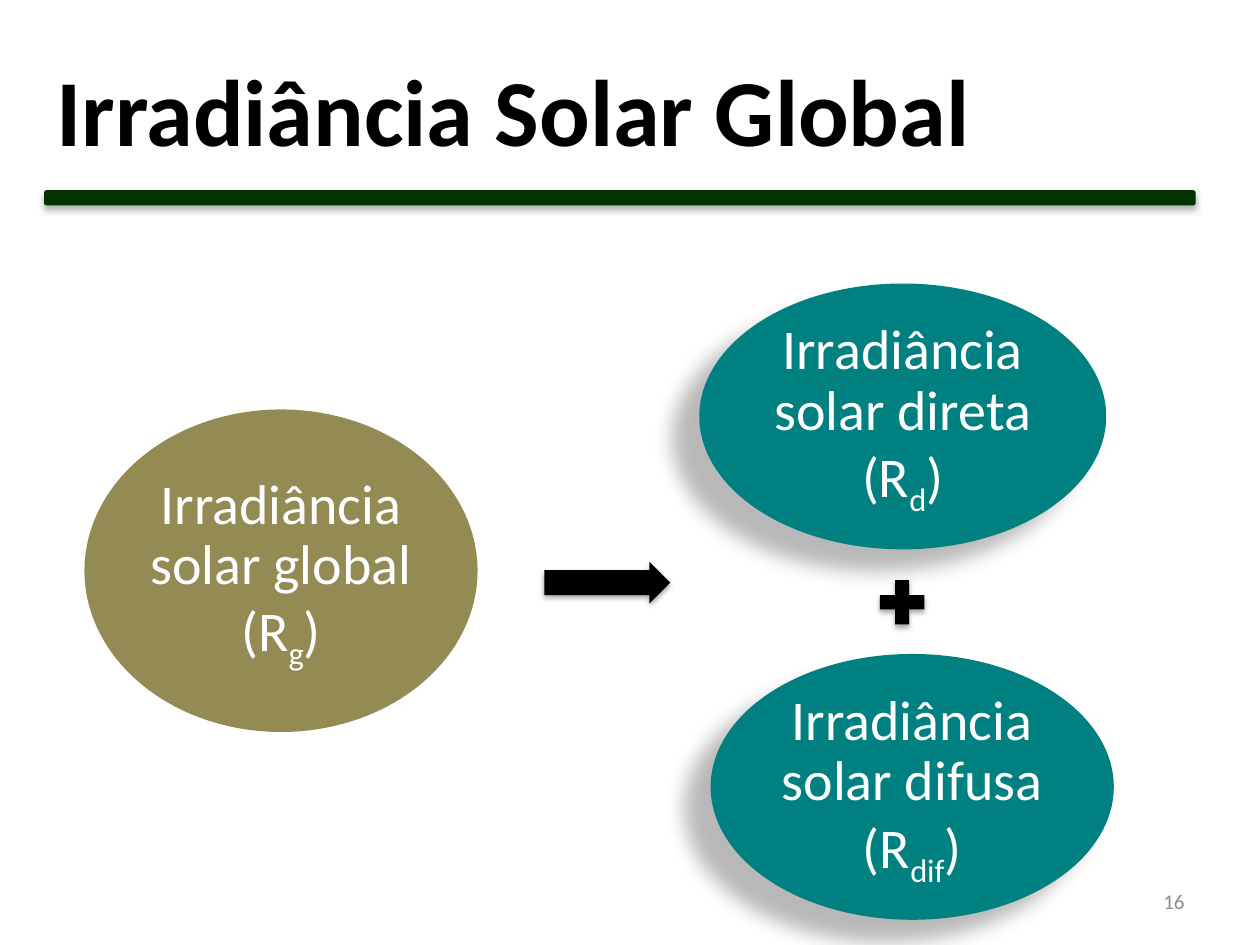
from dataclasses import dataclass

from lxml import etree
from pptx import Presentation
from pptx import util as u
from pptx.dml.color import RGBColor
from pptx.enum import shapes, text
from pptx.oxml.ns import qn


@dataclass(frozen=True)
class Theme:
    font: str = "Calibri"
    title_size: int = 54
    body_size: int = 32
    number_size: int = 12
    black: str = "000000"
    white: str = "FFFFFF"
    gray: str = "8C8C8C"
    green: str = "003300"
    teal: str = "008080"
    olive: str = "948A54"


@dataclass(frozen=True)
class Shadow:
    opacity: int  # percent
    blur: float  # points
    distance: float  # points
    angle: int  # degrees


THEME = Theme()
SOFT_SHADOW = Shadow(28, 11.8, 19.7, 141)
SMALL_SHADOW = Shadow(35, 3.1, 1.8, 90)
RULE_SHADOW = Shadow(32, 3.5, 2.2, 90)
SHAPE = shapes.MSO_SHAPE
ALIGN = text.PP_ALIGN


def add_shadow(shape, shadow):
    effects = shape._element.spPr.find(qn("a:effectLst"))
    outer = etree.SubElement(
        effects, qn("a:outerShdw"),
        blurRad=str(u.Pt(shadow.blur)), dist=str(u.Pt(shadow.distance)),
        dir=str(shadow.angle * 60000), algn="ctr", rotWithShape="0")
    color = etree.SubElement(outer, qn("a:srgbClr"), val=THEME.black)
    etree.SubElement(color, qn("a:alpha"), val=str(shadow.opacity * 1000))


def add_filled_shape(slide, kind, box, color, shadow=None):
    shape = slide.shapes.add_shape(kind, *map(u.Inches, box))
    shape.fill.solid()
    shape.fill.fore_color.rgb = RGBColor.from_string(color)
    shape.line.fill.background()
    shape.shadow.inherit = False
    if shadow:
        add_shadow(shape, shadow)
    return shape


def format_run(run, size, color, bold=False):
    run.font.name = THEME.font
    run.font.size = u.Pt(size)
    run.font.bold = bold
    run.font.color.rgb = RGBColor.from_string(color)


def add_label(slide, content, box, size, color, alignment, bold=False,
              anchor=text.MSO_ANCHOR.TOP):
    frame = slide.shapes.add_textbox(*map(u.Inches, box)).text_frame
    frame.word_wrap = True
    frame.vertical_anchor = anchor
    frame.text = content
    paragraph = frame.paragraphs[0]
    paragraph.alignment = alignment
    format_run(paragraph.runs[0], size, color, bold)


def add_irradiance(slide, name, subscript, box, color, shadow=None):
    """Ellipse holding a quantity's name and its subscripted symbol."""
    ellipse = add_filled_shape(slide, SHAPE.OVAL, box, color, shadow)
    frame = ellipse.text_frame
    frame.word_wrap = True
    frame.vertical_anchor = text.MSO_ANCHOR.MIDDLE
    frame.margin_left = frame.margin_right = u.Inches(0.04)
    frame.margin_top = frame.margin_bottom = u.Inches(0.04)
    paragraph = frame.paragraphs[0]
    paragraph.alignment = ALIGN.CENTER
    paragraph.line_spacing = 0.9
    for part in (f"{name} (R", subscript, ")"):
        run = paragraph.add_run()
        run.text = part
        format_run(run, THEME.body_size, THEME.white)
    paragraph.runs[1].font._element.set("baseline", "-25000")


def main():
    presentation = Presentation()
    presentation.slide_width = u.Inches(10)
    presentation.slide_height = u.Inches(7.5)
    slide = presentation.slides.add_slide(presentation.slide_layouts[6])

    # Slide number, title and rule
    add_label(slide, "16", (7.17, 6.95, 2.33, 0.4), THEME.number_size,
              THEME.gray, ALIGN.RIGHT, anchor=text.MSO_ANCHOR.MIDDLE)
    add_label(slide, "Irradiância Solar Global", (0.35, 0.36, 8.13, 1.01),
              THEME.title_size, THEME.black, ALIGN.JUSTIFY, bold=True)
    add_filled_shape(slide, SHAPE.ROUNDED_RECTANGLE, (0.35, 1.51, 9.14, 0.12),
                     THEME.green, RULE_SHADOW)

    # Global irradiance and its two components
    add_irradiance(slide, "Irradiância solar global", "g",
                   (0.67, 3.25, 3.12, 2.56), THEME.olive)
    add_irradiance(slide, "Irradiância solar direta", "d",
                   (5.55, 2.25, 3.23, 2.11), THEME.teal, SOFT_SHADOW)
    add_irradiance(slide, "Irradiância solar difusa", "dif",
                   (5.64, 5.19, 3.2, 2.11), THEME.teal, SOFT_SHADOW)

    # Arrow and plus sign
    arrow = add_filled_shape(slide, SHAPE.RIGHT_ARROW, (4.32, 4.46, 1, 0.33),
                             THEME.black, SMALL_SHADOW)
    arrow.adjustments[0] = 0.6
    add_filled_shape(slide, SHAPE.MATH_PLUS, (6.92, 4.54, 0.48, 0.48),
                     THEME.black, SMALL_SHADOW)

    presentation.save("out.pptx")


if __name__ == "__main__":
    main()
